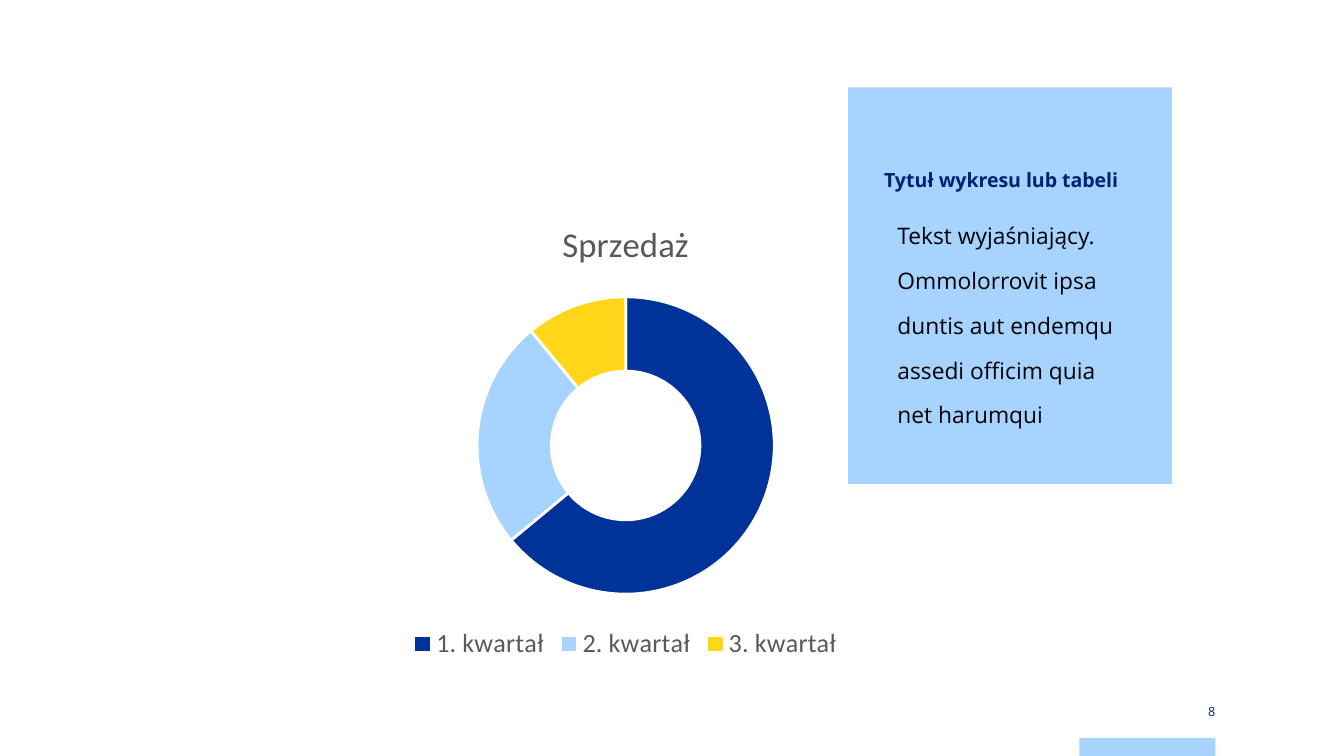
from pptx import Presentation
from pptx.chart.data import CategoryChartData
from pptx.dml.color import RGBColor
from pptx.enum.chart import XL_CHART_TYPE, XL_LEGEND_POSITION
from pptx.enum.shapes import MSO_SHAPE
from pptx.enum.text import MSO_ANCHOR, PP_ALIGN
from pptx.util import Cm, Pt

NAVY = RGBColor(0x00, 0x20, 0x73)
BLUE = RGBColor(0x00, 0x33, 0x99)
LIGHT_BLUE = RGBColor(0xA6, 0xD3, 0xFF)
YELLOW = RGBColor(0xFF, 0xD6, 0x18)
GREY = RGBColor(0x59, 0x59, 0x59)
BLACK = RGBColor(0x00, 0x00, 0x00)
WHITE = RGBColor(0xFF, 0xFF, 0xFF)

prs = Presentation()
prs.slide_width, prs.slide_height = Cm(25.4), Cm(14.28)
s = prs.slides.add_slide(prs.slide_layouts[6])


def add_panel(x, y, w, h):
    sp = s.shapes.add_shape(MSO_SHAPE.RECTANGLE, Cm(x), Cm(y), Cm(w), Cm(h))
    sp.shadow.inherit = False
    sp.fill.solid()
    sp.fill.fore_color.rgb = LIGHT_BLUE
    sp.line.fill.background()


def add_text(text, x, y, w, h, size, color, margins, spacing=None, bold=False):
    tf = s.shapes.add_textbox(Cm(x), Cm(y), Cm(w), Cm(h)).text_frame
    tf.word_wrap = True
    tf.margin_left = tf.margin_right = Cm(margins[0])
    tf.margin_top = tf.margin_bottom = Cm(margins[1])
    p = tf.paragraphs[0]
    p.line_spacing = spacing
    r = p.add_run()
    r.text = text
    r.font.name = "Open Sans"
    r.font.size = Pt(size)
    r.font.bold = bold
    r.font.color.rgb = color
    return tf


# Footer bar
add_panel(20.4, 13.94, 2.57, 0.34)

# Doughnut chart
data = CategoryChartData()
data.categories = ["1. kwartał", "2. kwartał", "3. kwartał"]
data.add_series("Sprzedaż", (64, 25, 11))
chart = s.shapes.add_chart(XL_CHART_TYPE.DOUGHNUT, Cm(4.55), Cm(3.73),
                           Cm(14.55), Cm(8.84), data).chart
chart.font.name = "Calibri"
chart.font.size = Pt(10)
chart.font.color.rgb = BLACK

chart.has_title = True
r = chart.chart_title.text_frame.paragraphs[0].add_run()
r.text = "Sprzedaż"
r.font.name = "Calibri"
r.font.size = Pt(18.6)
r.font.bold = False
r.font.color.rgb = GREY
chart.chart_title.include_in_layout = False

chart.has_legend = True
chart.legend.position = XL_LEGEND_POSITION.BOTTOM
chart.legend.include_in_layout = False
chart.legend.font.name = "Calibri"
chart.legend.font.size = Pt(14)
chart.legend.font.color.rgb = GREY

plot = chart.plots[0]
plot.vary_by_categories = True
for i, color in enumerate((BLUE, LIGHT_BLUE, YELLOW)):
    fmt = plot.series[0].points[i].format
    fmt.fill.solid()
    fmt.fill.fore_color.rgb = color
    fmt.line.color.rgb = WHITE
    fmt.line.width = Pt(1.5)

# Explanation panel
add_panel(16.03, 1.65, 6.12, 7.49)
add_text("Tytuł wykresu lub tabeli", 16.71, 2.34, 4.78, 2.03, 10.5, NAVY,
         (0, 0), Pt(36), True)

# Slide number
tf = add_text("8", 20.4, 13.26, 2.57, 0.34, 6.8, NAVY, (0, 0.2))
tf.vertical_anchor = MSO_ANCHOR.MIDDLE
tf.paragraphs[0].alignment = PP_ALIGN.RIGHT

# Explanation text
add_text("Tekst wyjaśniający. Ommolorrovit ipsa duntis aut endemqu "
         "assedi officim quia net harumqui",
         16.71, 3.73, 4.78, 4.78, 12.2, BLACK, (0.25, 0.13), Pt(24))

prs.save("out.pptx")
